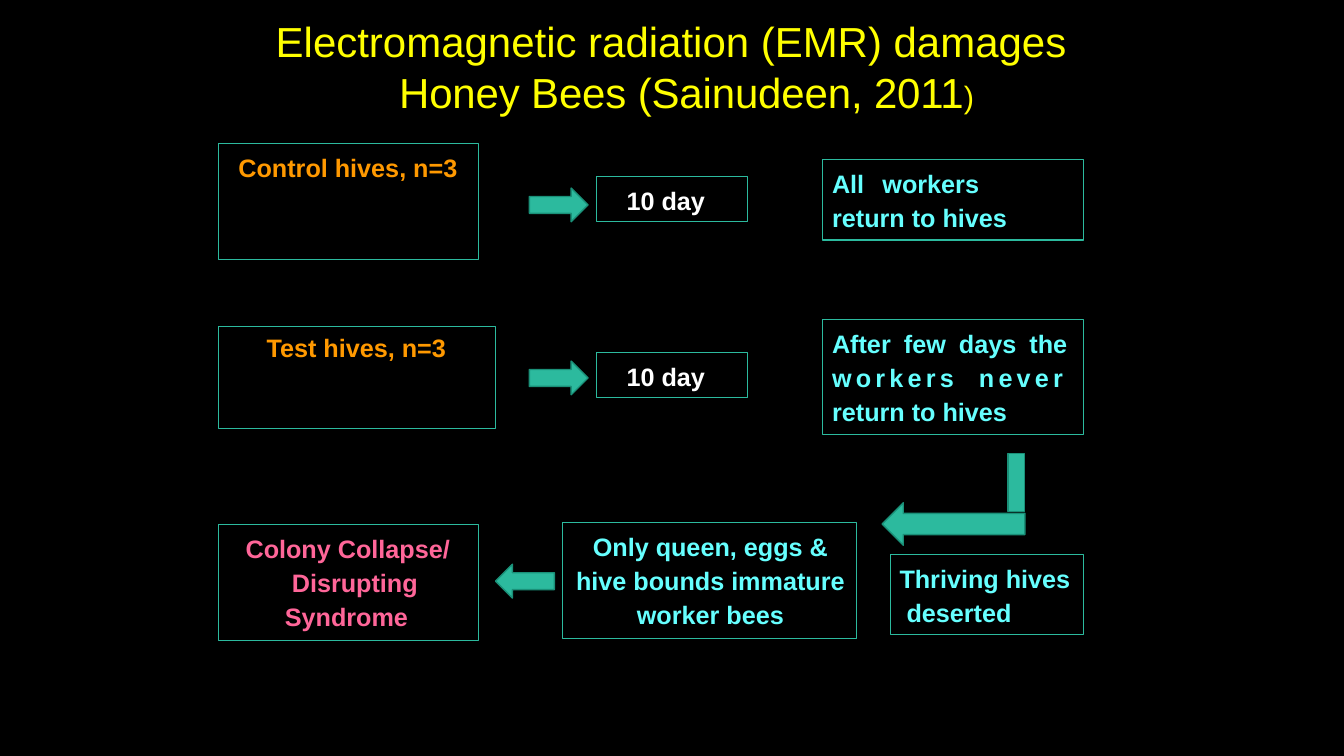
import dataclasses

import lxml.etree
import pptx
import pptx.dml.color
import pptx.enum.shapes
import pptx.enum.text
import pptx.oxml.ns
import pptx.util

Cm = pptx.util.Cm
Pt = pptx.util.Pt
SHAPE = pptx.enum.shapes.MSO_SHAPE
ALIGN = pptx.enum.text.PP_ALIGN


@dataclasses.dataclass(frozen=True)
class Theme:
    font: str = "Arial"
    background: str = "000000"
    title: str = "FFFF00"
    title_end: str = "FFFB00"
    hives: str = "FF9900"
    period: str = "FFFFFF"
    finding: str = "66FFFF"
    collapse: str = "FF6699"
    accent: str = "2CBA9E"
    arrow_edge: str = "1A9078"
    title_size: float = 30
    title_end_size: float = 22
    body_size: float = 18
    title_pitch: float = 36.4
    body_pitch: float = 24.3


THEME = Theme()


def rgb(value):
    return pptx.dml.color.RGBColor.from_string(value)


def add_run(p, text, size, color, bold=False, spacing=0):
    r = p.add_run()
    r.text = text
    r.font.name = THEME.font
    r.font.size = Pt(size)
    r.font.bold = bold
    r.font.color.rgb = rgb(color)
    if spacing:
        r._r.get_or_add_rPr().set("spc", str(int(spacing * 100)))


def set_paragraph(p, pitch, left=0, first=0, align=ALIGN.LEFT):
    p.alignment = align
    p.line_spacing = Pt(pitch)
    pPr = p._p.get_or_add_pPr()
    pPr.set("marL", str(Cm(left)))
    pPr.set("indent", str(Cm(first)))


def set_frame(tf, top=0, right=0):
    tf.word_wrap = True
    tf.vertical_anchor = pptx.enum.text.MSO_ANCHOR.TOP
    tf.margin_left = tf.margin_bottom = 0
    tf.margin_top, tf.margin_right = Cm(top), Cm(right)


def add_block(s, kind, x, y, w, h, fill, edge, width):
    sp = s.shapes.add_shape(kind, Cm(x), Cm(y), Cm(w), Cm(h))
    sp.shadow.inherit = False
    sp.fill.solid()
    sp.fill.fore_color.rgb = rgb(fill)
    sp.line.color.rgb = rgb(edge)
    sp.line.width = Pt(width)
    return sp


def add_arrow_part(s, kind, x, y, w=1.48, h=0.85):
    add_block(s, kind, x, y, w, h, THEME.accent, THEME.arrow_edge, 1)


def add_box(s, x, y, w, h, lines, color, left=0.23, first=0,
            align=ALIGN.LEFT, top=0.13, right=0):
    sp = add_block(s, SHAPE.RECTANGLE, x, y, w, h,
                   THEME.background, THEME.accent, 0.75)
    set_frame(sp.text_frame, top, right)
    p = sp.text_frame.paragraphs[0]
    set_paragraph(p, THEME.body_pitch, left, first, align)
    for i, line in enumerate(lines):
        if i:
            p.add_line_break()
        for text, spacing in line if isinstance(line, list) else [(line, 0)]:
            add_run(p, text, THEME.body_size, color, True, spacing)
    return p


def add_tab_stop(p, position):
    tabs = lxml.etree.SubElement(p._p.get_or_add_pPr(), pptx.oxml.ns.qn("a:tabLst"))
    lxml.etree.SubElement(tabs, pptx.oxml.ns.qn("a:tab"),
                          pos=str(Cm(position)), algn="l")


def add_title(s):
    tf = s.shapes.add_textbox(Cm(6.93), Cm(0.38), Cm(20.02), Cm(2.57)).text_frame
    set_frame(tf)
    p = tf.paragraphs[0]
    set_paragraph(p, THEME.title_pitch, 2.84, -2.82)
    add_run(p, "Electromagnetic radiation (EMR) damages", THEME.title_size, THEME.title)
    p.add_line_break()
    add_run(p, " Honey Bees (Sainudeen, 2011", THEME.title_size, THEME.title, spacing=-0.1)
    add_run(p, ")", THEME.title_end_size, THEME.title_end)


def add_period(s, arrow_y, box_y):
    add_arrow_part(s, SHAPE.RIGHT_ARROW, 13.34, arrow_y)
    add_box(s, 15.03, box_y, 3.81, 1.14, ["10 day"], THEME.period, left=0.76)


def main():
    prs = pptx.Presentation()
    prs.slide_width, prs.slide_height = Cm(33.87), Cm(19.05)
    s = prs.slides.add_slide(prs.slide_layouts[6])
    s.background.fill.solid()
    s.background.fill.fore_color.rgb = rgb(THEME.background)

    add_title(s)

    hives_x, finding_x = 5.5, 20.74
    add_box(s, hives_x, 3.62, 6.56, 2.92, ["Control hives, n=3"], THEME.hives, left=0.51)
    add_period(s, 4.74, 4.45)
    p = add_box(s, finding_x, 4.02, 6.56, 2.03,
                ["All\tworkers", "return to hives"], THEME.finding)
    add_tab_stop(p, 1.55)

    add_box(s, hives_x, 8.23, 6.99, 2.57, ["Test hives, n=3"], THEME.hives,
            left=1.22, top=0.06)
    add_period(s, 9.1, 8.89)
    add_box(s, finding_x, 8.06, 6.56, 2.89,
            [[("After few days the ", 0), ("workers never ", 3), ("return to hives", 0)]],
            THEME.finding, align=ALIGN.JUSTIFY, right=0.4)

    add_arrow_part(s, SHAPE.RECTANGLE, 25.4, 11.43, 0.42, 1.46)
    add_arrow_part(s, SHAPE.LEFT_ARROW, 22.23, 12.67, 3.6, 1.07)
    add_box(s, 22.44, 13.97, 4.87, 2.03, ["Thriving hives", " deserted"], THEME.finding)
    add_box(s, 14.17, 13.17, 7.42, 2.92,
            ["Only queen, eggs &", "hive bounds immature", "worker bees"],
            THEME.finding, left=0.05, align=ALIGN.CENTER)
    add_arrow_part(s, SHAPE.LEFT_ARROW, 12.49, 14.22)
    add_box(s, hives_x, 13.21, 6.56, 2.92,
            ["Colony Collapse/", " Disrupting", "Syndrome"],
            THEME.collapse, left=1.68, first=-0.99)

    prs.save("out.pptx")


if __name__ == "__main__":
    main()
